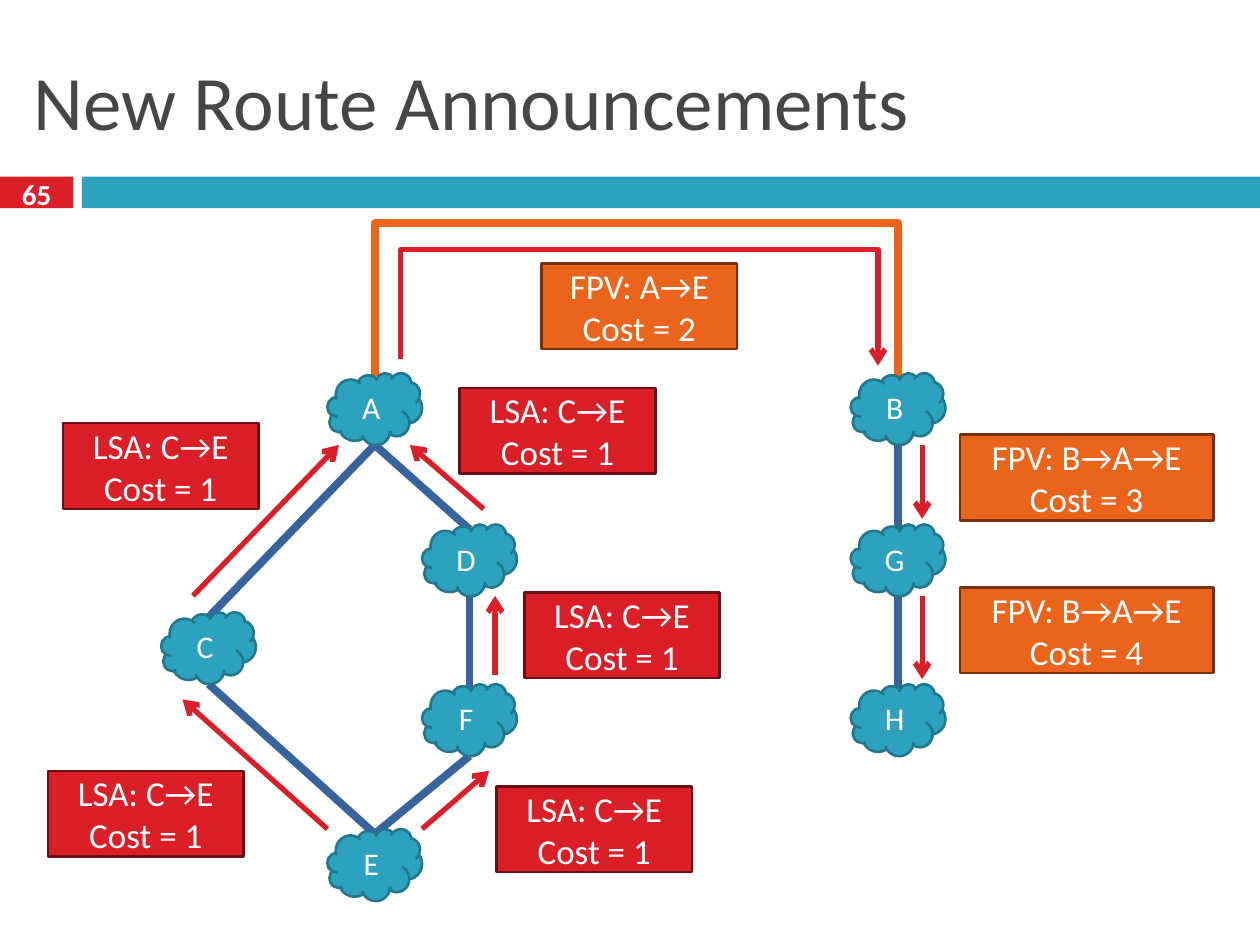
from lxml import etree
from pptx import Presentation
from pptx.dml.color import RGBColor
from pptx.enum import shapes, text
from pptx.oxml import ns
from pptx.util import Cm, Pt

WHITE = RGBColor(0xFF, 0xFF, 0xFF)
GREY = RGBColor(0x46, 0x46, 0x46)
RED = RGBColor(0xDA, 0x1F, 0x28)
MAROON = RGBColor(0x6D, 0x10, 0x14)
TEAL = RGBColor(0x2D, 0xA2, 0xBF)
DEEP = RGBColor(0x21, 0x78, 0x8D)
BLUE = RGBColor(0x39, 0x63, 0x9D)
ORANGE = RGBColor(0xEB, 0x64, 0x1B)
BROWN = RGBColor(0x78, 0x31, 0x0B)

FONT = "Calibri"
RECT = shapes.MSO_SHAPE.RECTANGLE
CLOUD = shapes.MSO_SHAPE.CLOUD
LINE = shapes.MSO_CONNECTOR.STRAIGHT
ELBOW = shapes.MSO_CONNECTOR.ELBOW
LEFT, MID = text.PP_ALIGN.LEFT, text.PP_ALIGN.CENTER

# Routers: left and top in cm
WIDE, HIGH = 1.91, 1.45
NODES = {
    "A": (6.6, 7.52), "B": (17.15, 7.52),
    "C": (3.25, 12.34), "D": (8.51, 10.57),
    "E": (6.6, 16.71), "F": (8.51, 13.79),
    "G": (17.15, 10.57), "H": (17.15, 13.79),
}
# Links run from the upper router to the lower one
LINKS = ["AC", "AD", "DF", "FE", "CE", "BG", "GH"]
# Direction of each announcement: start x, y and end x, y
ARROWS = [
    (8.51, 16.71, 9.86, 15.54), (6.6, 16.71, 3.68, 14.1),
    (3.89, 12.01, 6.83, 8.97), (9.98, 13.61, 9.98, 12.01),
    (9.75, 10.26, 8.26, 8.97), (18.59, 8.97, 18.59, 10.46),
    (18.59, 12.01, 18.59, 13.69),
]
LSAS = [(9.27, 7.82), (10.57, 11.94), (10.01, 15.85), (0.97, 15.54), (1.27, 8.53)]
# Left, top, width, route, cost
FPVS = [
    (10.92, 5.31, 3.94, "A→E", 2),
    (19.35, 8.76, 5.11, "B→A→E", 3),
    (19.35, 11.84, 5.11, "B→A→E", 4),
]


def write(shape, lines, size, color=WHITE, align=MID, bold=False):
    frame = shape.text_frame
    frame.word_wrap = True
    frame.vertical_anchor = text.MSO_ANCHOR.MIDDLE
    look = {"name": FONT, "size": Pt(size), "bold": bold}
    for i, line in enumerate(lines):
        para = frame.add_paragraph() if i else frame.paragraphs[0]
        para.alignment = align
        run = para.add_run()
        run.text = line
        run.font.color.rgb = color
        for key, val in look.items():
            setattr(run.font, key, val)


def label(slide, box, line, size, **look):
    write(slide.shapes.add_textbox(*map(Cm, box)), [line], size, **look)


def block(slide, kind, box, fill, edge=None):
    shape = slide.shapes.add_shape(kind, *map(Cm, box))
    shape.shadow.inherit = False
    shape.fill.solid()
    shape.fill.fore_color.rgb = fill
    if edge is None:
        shape.line.fill.background()
    else:
        shape.line.color.rgb = edge
        shape.line.width = Pt(1.5)
    return shape


def wire(slide, ends, color, width, head=False, kind=LINE):
    line = slide.shapes.add_connector(kind, *map(Cm, ends))
    line.line.color.rgb = color
    line.line.width = Pt(width)
    if head:
        tail = etree.SubElement(line.line._get_or_add_ln(), ns.qn("a:tailEnd"))
        tail.set("type", "arrow")
    etree.SubElement(line._element.spPr, ns.qn("a:effectLst"))
    return line


def arch(slide, ends, top, color, width, head=False):
    """Elbow that rises to top, crosses and drops; it ends below its start."""
    x1, y1, x2, y2 = ends
    midx, midy = (x1 + x2) / 2, (y1 + y2) / 2
    dx, dy = (y2 - y1) / 2, (x2 - x1) / 2
    # The frame lies on its side and is turned by 270 degrees
    turned = (midx + dx, midy - dy, midx - dx, midy + dy)
    line = wire(slide, turned, color, width, head, ELBOW)
    props = line._element.spPr
    props.find(ns.qn("a:xfrm")).set("rot", str(270 * 60000))
    bend = round((top - y1) / (y2 - y1) * 100000)
    geom = props.find(ns.qn("a:prstGeom"))
    guides = geom.find(ns.qn("a:avLst"))
    if guides is None:
        guides = etree.SubElement(geom, ns.qn("a:avLst"))
    etree.SubElement(guides, ns.qn("a:gd"), name="adj1", fmla=f"val {bend}")


def link(slide, upper, lower):
    (x1, y1), (x2, y2) = NODES[upper], NODES[lower]
    half = WIDE / 2
    wire(slide, (x1 + half, y1 + HIGH, x2 + half, y2 + 0.1), BLUE, 4.5)


def node(slide, name):
    write(block(slide, CLOUD, (*NODES[name], WIDE, HIGH), TEAL, DEEP), [name], 18)


def note(slide, x, y, width, route, cost, fill, edge):
    shape = block(slide, RECT, (x, y, width, 1.73), fill, edge)
    write(shape, [route, f"Cost = {cost}"], 20)


def main():
    deck = Presentation()
    deck.slide_width, deck.slide_height = Cm(25.4), Cm(19.05)
    slide = deck.slides.add_slide(deck.slide_layouts[6])

    # Title, band and slide number
    block(slide, RECT, (0, 3.56, 1.48, 0.64), RED)
    block(slide, RECT, (1.65, 3.56, 23.75, 0.64), TEAL)
    label(slide, (0.43, 0.64, 24.55, 2.74), "New Route Announcements", 44,
          color=GREY, align=LEFT)
    label(slide, (0, 3.48, 1.48, 0.84), "65", 16.6, bold=True)

    # Network
    for upper, lower in LINKS:
        link(slide, upper, lower)
    arch(slide, (7.56, 7.59, 18.11, 7.62), 4.5, ORANGE, 4.5)
    for name in NODES:
        node(slide, name)

    # Announcements
    for ends in ARROWS:
        wire(slide, ends, RED, 3, head=True)
    arch(slide, (8.08, 7.24, 17.7, 7.37), 5.03, RED, 3, head=True)
    for x, y in LSAS:
        note(slide, x, y, 3.94, "LSA: C→E", 1, RED, MAROON)
    for x, y, width, route, cost in FPVS:
        note(slide, x, y, width, f"FPV: {route}", cost, ORANGE, BROWN)

    deck.save("out.pptx")


if __name__ == "__main__":
    main()
